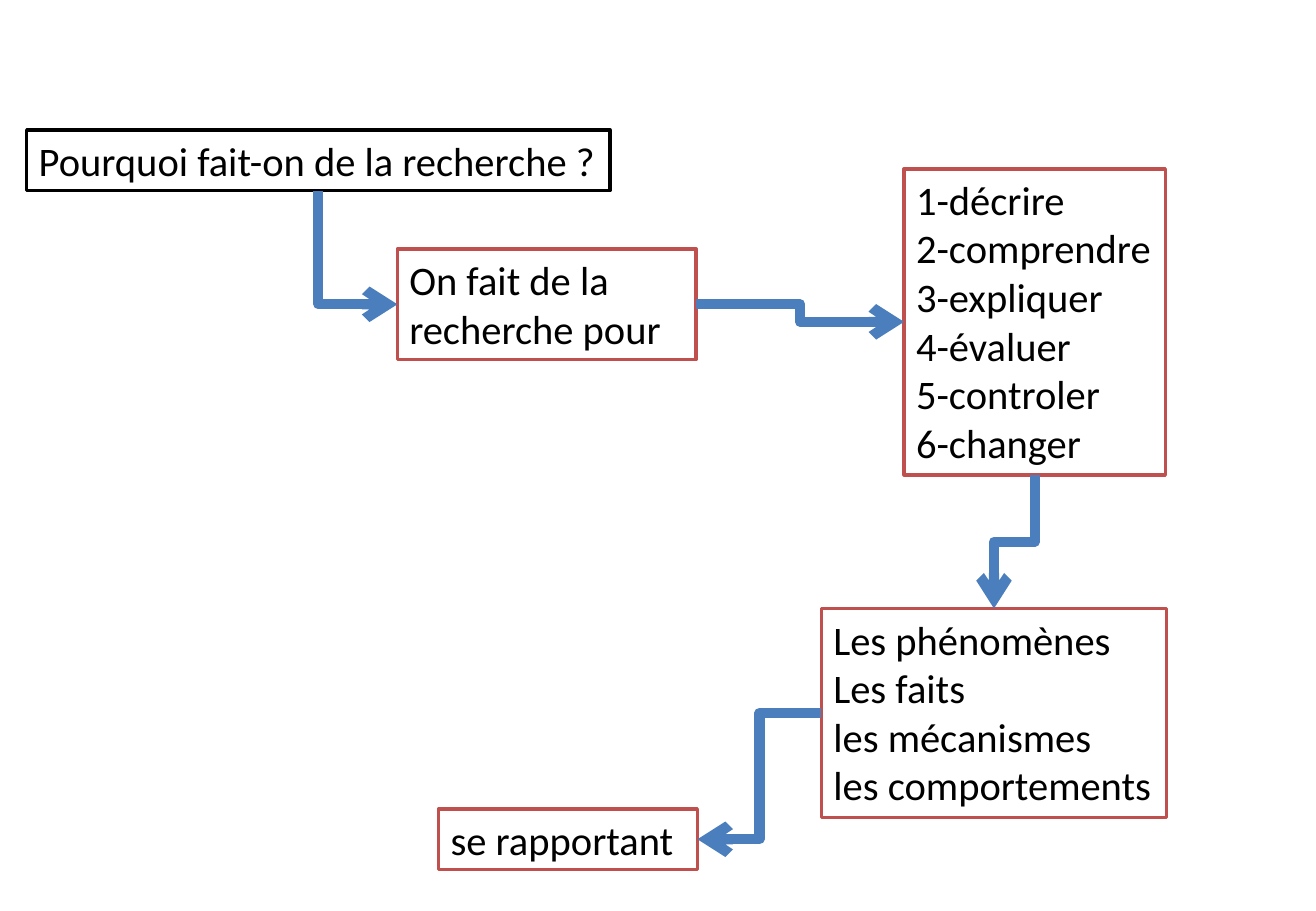
from lxml import etree
from pptx import Presentation
from pptx.dml.color import RGBColor
from pptx.enum.shapes import MSO_CONNECTOR, MSO_SHAPE
from pptx.enum.text import MSO_ANCHOR, MSO_AUTO_SIZE, PP_ALIGN
from pptx.oxml.ns import qn
from pptx.util import Inches, Pt

RECT = MSO_SHAPE.RECTANGLE
ELBOW = MSO_CONNECTOR.ELBOW
TOP = MSO_ANCHOR.TOP
GROW = MSO_AUTO_SIZE.SHAPE_TO_FIT_TEXT
LEFT, JUST = PP_ALIGN.LEFT, PP_ALIGN.JUSTIFY
NORTH, WEST, SOUTH, EAST = range(4)
COLORS = {"ink": "000000", "paper": "FFFFFF", "red": "C0504D", "blue": "4B7EBC"}


class Chart:
    """Draws framed texts and elbow arrows on one slide."""

    def __init__(self, slide, font="Calibri", size=24):
        self.slide = slide
        self.font = font
        self.size = Pt(size)

    def color(self, name):
        return RGBColor.from_string(COLORS[name])

    def box(self, left, top, width, height, lines, edge="red", wrap=False, align=LEFT):
        box = self.slide.shapes.add_shape(
            RECT, Inches(left), Inches(top), Inches(width), Inches(height))
        box.shadow.inherit = False
        box.fill.solid()
        box.fill.fore_color.rgb = self.color("paper")
        box.line.color.rgb = self.color(edge)
        box.line.width = Pt(2)
        frame = box.text_frame
        frame.word_wrap = wrap
        frame.auto_size = GROW
        frame.vertical_anchor = TOP
        for i, line in enumerate(lines):
            para = frame.add_paragraph() if i else frame.paragraphs[0]
            para.alignment = align
            run = para.add_run()
            run.text = line
            run.font.name = self.font
            run.font.size = self.size
            run.font.color.rgb = self.color("ink")
        return box

    def site(self, box, side):
        x, y = box.left + box.width // 2, box.top + box.height // 2
        return {NORTH: (x, box.top), WEST: (box.left, y),
                SOUTH: (x, box.top + box.height), EAST: (box.left + box.width, y)}[side]

    def link(self, start, out, end, into, turn=0, flip=None, bends=3):
        (x1, y1), (x2, y2) = self.site(start, out), self.site(end, into)
        line = self.slide.shapes.add_connector(ELBOW, x1, y1, x2, y2)
        line.begin_connect(start, out)
        line.end_connect(end, into)
        wide, high = abs(x2 - x1), abs(y2 - y1)
        if turn % 180:
            wide, high = high, wide
        line.left, line.top = (x1 + x2 - wide) // 2, (y1 + y2 - high) // 2
        line.width, line.height = wide, high
        props = line._element.spPr
        frame = props.find(qn("a:xfrm"))
        frame.set("rot", str(turn * 60000))
        for axis in ("flipH", "flipV"):
            frame.set(axis, str(int(axis == flip)))
        props.find(qn("a:prstGeom")).set("prst", f"bentConnector{bends}")
        line.line.color.rgb = self.color("blue")
        line.line.width = Pt(6)
        etree.SubElement(props.find(qn("a:ln")), qn("a:tailEnd"), type="arrow")
        etree.SubElement(props, qn("a:effectLst"))


def main():
    deck = Presentation()
    deck.slide_width, deck.slide_height = Inches(10.83), Inches(7.5)
    chart = Chart(deck.slides.add_slide(deck.slide_layouts[6]))

    why = chart.box(0.22, 1.07, 4.8, 0.5, ["Pourquoi fait-on de la recherche ?"],
                    edge="ink", wrap=True, align=JUST)
    goals = ["décrire", "comprendre", "expliquer", "évaluer", "controler", "changer"]
    aims = chart.box(7.44, 1.39, 2.15, 2.52,
                     [f"{i}-{goal}" for i, goal in enumerate(goals, 1)])
    topics = chart.box(6.76, 5.01, 2.84, 1.72, [
        "Les phénomènes", "Les faits", "les mécanismes", "les comportements"])
    about = chart.box(3.61, 6.66, 2.13, 0.5, ["se rapportant"])
    reply = chart.box(3.27, 2.05, 2.46, 0.91, ["On fait de la recherche pour"], wrap=True)

    chart.link(why, SOUTH, reply, WEST, turn=270, flip="flipH", bends=2)
    chart.link(reply, EAST, aims, WEST)
    chart.link(aims, SOUTH, topics, NORTH, turn=90)
    chart.link(topics, WEST, about, EAST, turn=180, flip="flipV")
    deck.save("out.pptx")


if __name__ == "__main__":
    main()
